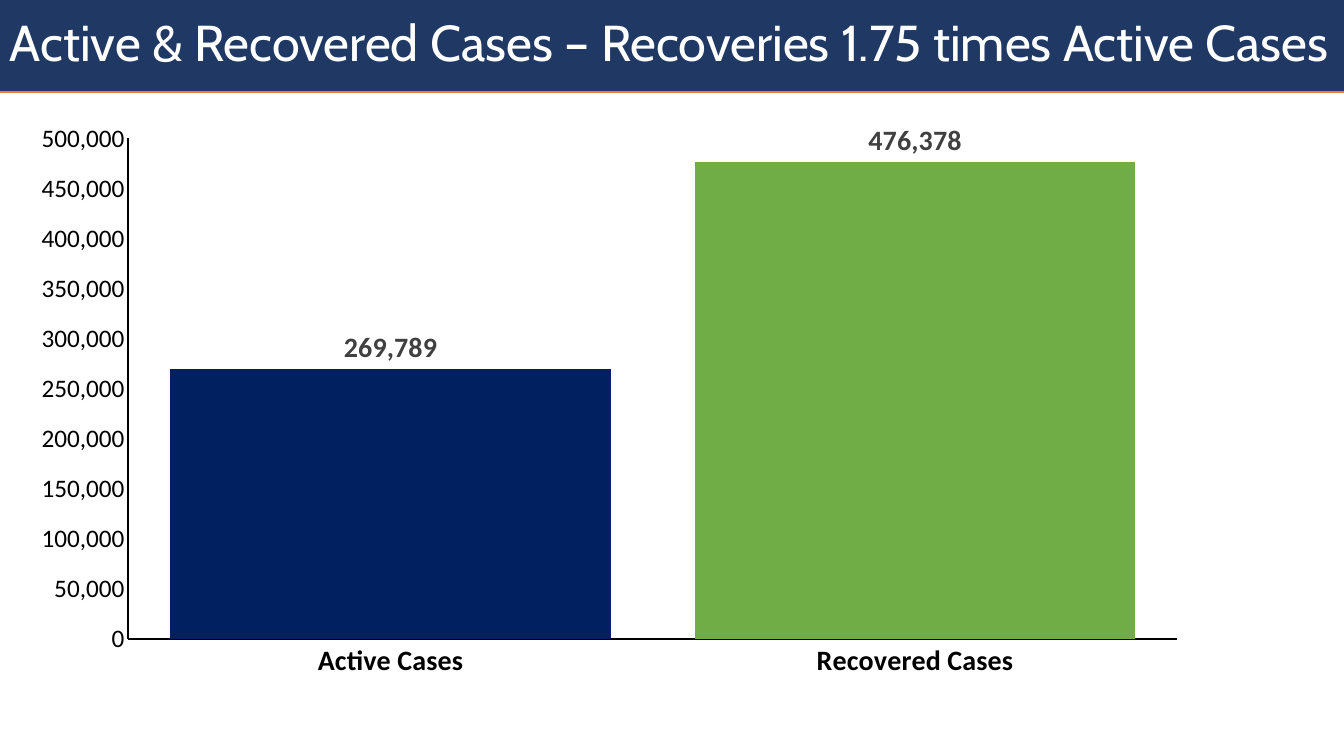
from lxml import etree
from pptx import Presentation
from pptx.chart.data import CategoryChartData
from pptx.dml.color import RGBColor
from pptx.enum.chart import XL_CHART_TYPE, XL_LABEL_POSITION, XL_TICK_MARK
from pptx.enum.shapes import MSO_CONNECTOR, MSO_SHAPE
from pptx.enum.text import MSO_ANCHOR, PP_ALIGN
from pptx.oxml import parse_xml
from pptx.oxml.ns import nsdecls, qn
from pptx.util import Emu, Pt

COLUMNS = XL_CHART_TYPE.COLUMN_CLUSTERED
OUTSIDE_END = XL_LABEL_POSITION.OUTSIDE_END
NO_TICK = XL_TICK_MARK.NONE
STRAIGHT = MSO_CONNECTOR.STRAIGHT
RECTANGLE = MSO_SHAPE.RECTANGLE
MIDDLE = MSO_ANCHOR.MIDDLE
LEFT = PP_ALIGN.LEFT

EMU_PER_PX = 914400 / 100.8
PAGE_WIDTH, PAGE_HEIGHT, BANNER_HEIGHT = 1344, 756, 91
COLORS = {
    "banner": "203864", "rule": "ED7D31", "title": "FFFFFF", "axis": "000000",
    "label": "404040", "active": "002060", "recovered": "70AD47",
}


def px(length):
    return Emu(round(length * EMU_PER_PX))


def style_font(font, name, size, color, bold=False):
    font.name = name
    font.size = Pt(size)
    font.bold = bold
    font.color.rgb = RGBColor.from_string(COLORS[color])


deck = Presentation()
deck.slide_width, deck.slide_height = px(PAGE_WIDTH), px(PAGE_HEIGHT)
page = deck.slides.add_slide(deck.slide_layouts[6])

# Rule under the banner
rule = page.shapes.add_connector(
    STRAIGHT, 0, px(BANNER_HEIGHT), px(PAGE_WIDTH), px(BANNER_HEIGHT))
rule.line.color.rgb = RGBColor.from_string(COLORS["rule"])
rule.line.width = Pt(2.25)
etree.SubElement(rule._element.spPr, qn("a:effectLst"))

# Title banner
banner = page.shapes.add_shape(
    RECTANGLE, 0, 0, px(PAGE_WIDTH), px(BANNER_HEIGHT))
banner.shadow.inherit = False
banner.fill.solid()
banner.fill.fore_color.rgb = RGBColor.from_string(COLORS["banner"])
banner.line.fill.background()
frame = banner.text_frame
frame.text = "Active & Recovered Cases – Recoveries 1.75 times Active Cases"
frame.word_wrap = True
frame.vertical_anchor = MIDDLE
para = frame.paragraphs[0]
para.alignment = LEFT
para.line_spacing = 0.9
style_font(para.runs[0].font, "Cabin", 36, "title")

# Column chart
data = CategoryChartData(number_format="#,##0")
data.categories = ["Active Cases", "Recovered Cases"]
data.add_series("Series 1", [269789, 476378])
chart = page.shapes.add_chart(
    COLUMNS, px(-12), px(BANNER_HEIGHT), px(1210), px(651), data).chart
chart.has_title = False
chart.has_legend = False
style_font(chart.font, "Calibri", 10, "axis")

# Columns and their labels
plot = chart.plots[0]
plot.gap_width = 19
plot.vary_by_categories = False
for index, color in enumerate(["active", "recovered"]):
    fill = plot.series[0].points[index].format.fill
    fill.solid()
    fill.fore_color.rgb = RGBColor.from_string(COLORS[color])
plot.has_data_labels = True
labels = plot.data_labels
labels.show_value = True
labels.number_format = "#,##0"
labels.number_format_is_linked = False
labels.position = OUTSIDE_END
style_font(labels.font, "Calibri", 20, "label", True)

# Axes
for axis, size, bold in [(chart.category_axis, 20, True),
                         (chart.value_axis, 18, False)]:
    axis.has_major_gridlines = False
    axis.major_tick_mark = axis.minor_tick_mark = NO_TICK
    axis.format.line.color.rgb = RGBColor.from_string(COLORS["axis"])
    axis.format.line.width = Pt(1.5)
    style_font(axis.tick_labels.font, "Calibri", size, "axis", bold)
values = chart.value_axis
values.minimum_scale, values.maximum_scale, values.major_unit = 0, 500000, 50000
values.tick_labels.number_format = "#,##0"
values.tick_labels.number_format_is_linked = False

# Inner plot area, as fractions of the chart
plot_area = chart._chartSpace.chart.plotArea
for old_layout in plot_area.findall(qn("c:layout")):
    plot_area.remove(old_layout)
plot_area.insert(0, parse_xml(
    f'<c:layout {nsdecls("c")}><c:manualLayout><c:layoutTarget val="inner"/>'
    '<c:xMode val="edge"/><c:yMode val="edge"/><c:x val="0.116"/>'
    '<c:y val="0.073"/><c:w val="0.867"/><c:h val="0.769"/>'
    '</c:manualLayout></c:layout>'))

deck.save("out.pptx")
